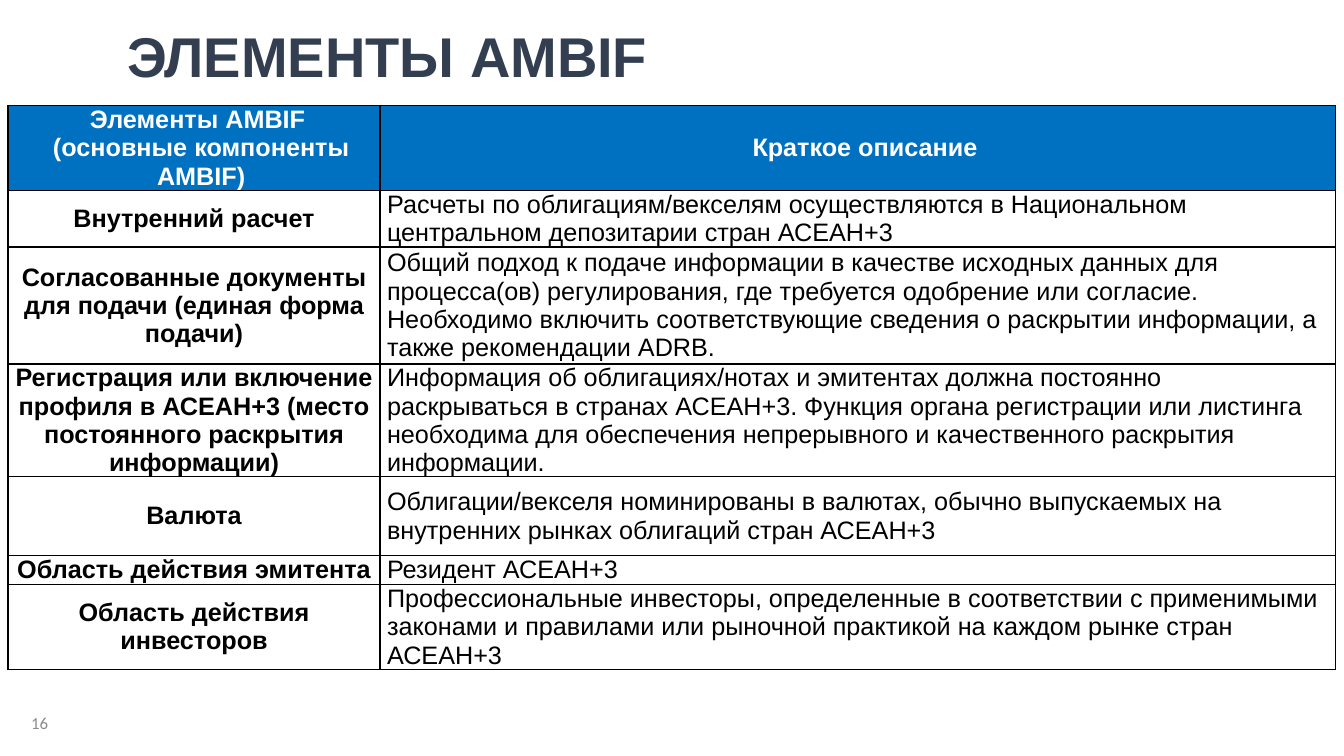
from dataclasses import dataclass

from lxml import etree
from pptx import Presentation
from pptx.dml.color import RGBColor
from pptx.enum.text import MSO_ANCHOR, PP_ALIGN
from pptx.oxml.ns import qn
from pptx.util import Inches, Pt

LEFT, CENTER = PP_ALIGN.LEFT, PP_ALIGN.CENTER
MIDDLE = MSO_ANCHOR.MIDDLE
TITLE_ONLY = 5


@dataclass(frozen=True)
class Theme:
    ink: str = "000000"
    title: str = "333F50"
    header: str = "0070C0"
    on_header: str = "FFFFFF"
    muted: str = "8C8C8C"
    font: str = "Arial"
    number_font: str = "Calibri"
    title_size: int = 40
    body_size: int = 18
    number_size: int = 12
    border: int = 1


HEADER = ("Элементы AMBIF \n(основные компоненты AMBIF)", "Краткое описание")
ELEMENTS = [
    ("Внутренний расчет",
     "Расчеты по облигациям/векселям осуществляются в Национальном "
     "центральном депозитарии стран АСЕАН+3"),
    ("Согласованные документы для подачи (единая форма подачи)",
     "Общий подход к подаче информации в качестве исходных данных для "
     "процесса(ов) регулирования, где требуется одобрение или согласие. "
     "Необходимо включить соответствующие сведения о раскрытии информации, "
     "а также рекомендации ADRB."),
    ("Регистрация или включение профиля в АСЕАН+3 "
     "(место постоянного раскрытия информации)",
     "Информация об облигациях/нотах и эмитентах должна постоянно "
     "раскрываться в странах АСЕАН+3. Функция органа регистрации или "
     "листинга необходима для обеспечения непрерывного и качественного "
     "раскрытия информации."),
    ("Валюта",
     "Облигации/векселя номинированы в валютах, обычно выпускаемых на "
     "внутренних рынках облигаций стран АСЕАН+3"),
    ("Область действия эмитента", "Резидент АСЕАН+3"),
    ("Область действия инвесторов",
     "Профессиональные инвесторы, определенные в соответствии с применимыми "
     "законами и правилами или рыночной практикой на каждом рынке стран "
     "АСЕАН+3"),
]
# Shares of the slide, in percent
COLUMNS = (27.68, 71.12)
ROWS = (10.4, 6.67, 15.47, 13.87, 10.4, 3.87, 9.6)


def write(tf, text, *, font, size, color, bold=False, align=LEFT, spacing=None):
    tf.word_wrap = True
    p = tf.paragraphs[0]
    p.text = text
    p.alignment = align
    if spacing:
        p.line_spacing = spacing
    for r in p.runs:
        r.font.name, r.font.size, r.font.bold = font, Pt(size), bold
        r.font.color.rgb = RGBColor.from_string(color)
    return p


def set_borders(cell, color, width):
    tc_pr = cell._tc.get_or_add_tcPr()
    for i, side in enumerate(("lnL", "lnR", "lnT", "lnB")):
        ln = etree.Element(qn(f"a:{side}"), w=str(Pt(width)))
        fill = etree.SubElement(ln, qn("a:solidFill"))
        etree.SubElement(fill, qn("a:srgbClr"), val=color)
        tc_pr.insert(i, ln)


class SlideBuilder:
    def __init__(self, prs, theme):
        self.prs, self.theme = prs, theme
        self.slide = prs.slides.add_slide(prs.slide_layouts[TITLE_ONLY])

    def x(self, share):
        return round(self.prs.slide_width * share / 100)

    def y(self, share):
        return round(self.prs.slide_height * share / 100)

    def box(self, left, top, width, height):
        return self.x(left), self.y(top), self.x(width), self.y(height)

    def title(self, text, *box):
        t, sp = self.theme, self.slide.shapes.title
        sp.left, sp.top, sp.width, sp.height = self.box(*box)
        sp.text_frame.vertical_anchor = MIDDLE
        write(sp.text_frame, text, font=t.font, size=t.title_size,
              color=t.title, bold=True, spacing=0.9)

    def number(self, text, *box):
        t = self.theme
        tf = self.slide.shapes.add_textbox(*self.box(*box)).text_frame
        tf.vertical_anchor = MIDDLE
        write(tf, text, font=t.number_font, size=t.number_size, color=t.muted)

    def table(self, rows, left, top, widths, heights):
        box = self.box(left, top, sum(widths), sum(heights))
        table = self.slide.shapes.add_table(len(rows), len(widths), *box).table
        table.first_row = table.horz_banding = False
        for column, width in zip(table.columns, widths):
            column.width = self.x(width)
        for row, height in zip(table.rows, heights):
            row.height = self.y(height)
        for i, texts in enumerate(rows):
            for j, text in enumerate(texts):
                self.cell(table.cell(i, j), text, header=i == 0, label=j == 0)

    def cell(self, cell, text, header, label):
        t = self.theme
        cell.margin_left = cell.margin_right = Inches(0.07)
        cell.margin_top = cell.margin_bottom = 0
        cell.vertical_anchor = MIDDLE
        strong = header or label
        p = write(cell.text_frame, text, font=t.font, size=t.body_size,
                  color=t.on_header if header else t.ink, bold=strong,
                  align=CENTER if strong else LEFT)
        if header:
            p._p.get_or_add_pPr().set("marL", str(Inches(0.14)))
            cell.fill.solid()
            cell.fill.fore_color.rgb = RGBColor.from_string(t.header)
        else:
            cell.fill.background()
        set_borders(cell, t.ink, t.border)


def main():
    prs = Presentation()
    prs.slide_width, prs.slide_height = Inches(13.33), Inches(7.5)
    s = SlideBuilder(prs, Theme())
    s.table([HEADER, *ELEMENTS], 0.6, 14, COLUMNS, ROWS)
    s.title("ЭЛЕМЕНТЫ AMBIF", 8.7, 1.73, 89.87, 12.13)
    s.number("16", 1.58, 92.93, 22.5, 5.33)
    prs.save("out.pptx")


if __name__ == "__main__":
    main()
